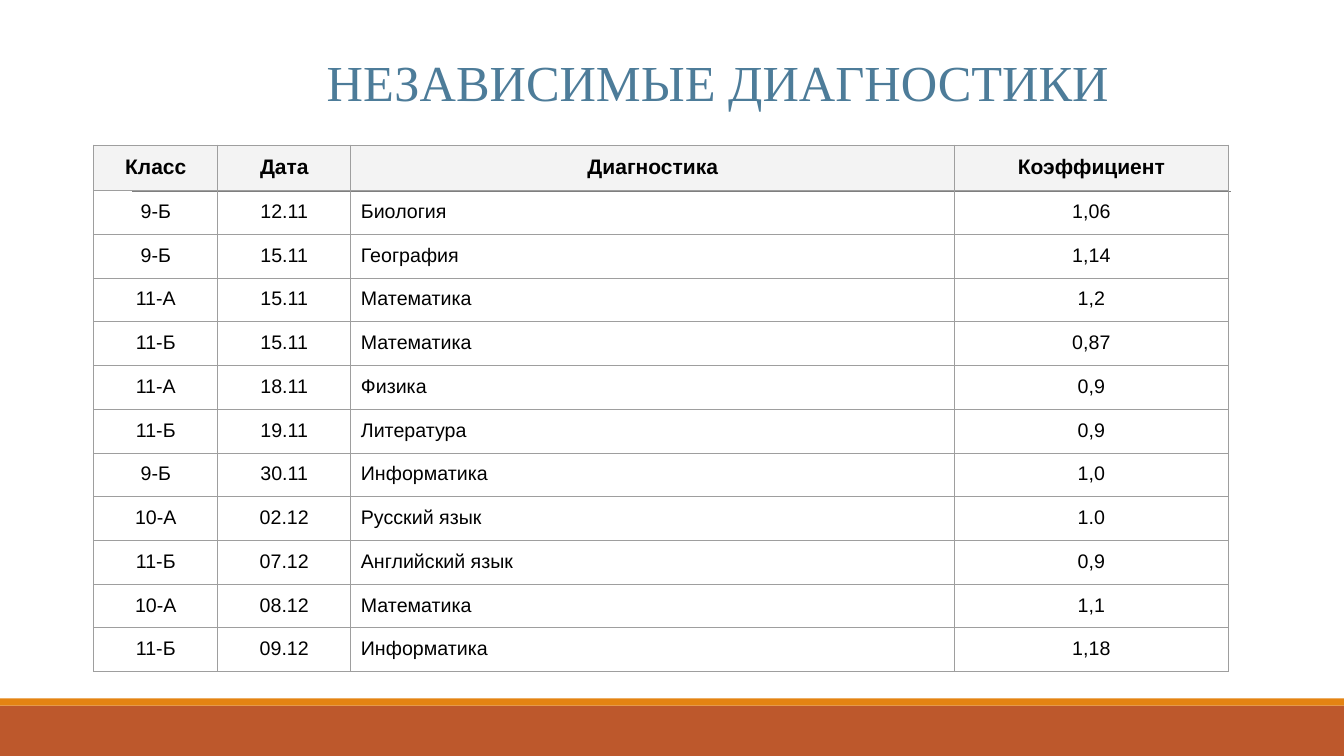
"""Builds a slide with a table of independent school diagnostics."""
from lxml import etree
from pptx import Presentation, util as u
from pptx.dml.color import RGBColor
from pptx.enum import shapes, text
from pptx.oxml import ns

TITLE = "НЕЗАВИСИМЫЕ ДИАГНОСТИКИ"
HEADINGS = ("Класс", "Дата", "Диагностика", "Коэффициент")
RESULTS = [
    ("9-Б", "12.11", "Биология", "1,06"),
    ("9-Б", "15.11", "География", "1,14"),
    ("11-А", "15.11", "Математика", "1,2"),
    ("11-Б", "15.11", "Математика", "0,87"),
    ("11-А", "18.11", "Физика", "0,9"),
    ("11-Б", "19.11", "Литература", "0,9"),
    ("9-Б", "30.11", "Информатика", "1,0"),
    ("10-А", "02.12", "Русский язык", "1.0"),
    ("11-Б", "07.12", "Английский язык", "0,9"),
    ("10-А", "08.12", "Математика", "1,1"),
    ("11-Б", "09.12", "Информатика", "1,18"),
]
COLORS = {"title": "4D7C99", "text": "000000", "heading": "F3F3F3", "grid": "9E9E9E",
          "rule": "7F7F7F", "footer": "BD582C", "stripe": "E48312"}
WIDTH, HEIGHT = 13.33, 7.5
FOOTER, STRIPE = 0.5, 0.07
COLUMNS = (1.23, 1.32, 5.99, 2.71)
TABLE_LEFT, TABLE_TOP, TABLE_HEIGHT = 0.93, 1.44, 5.22
HEADING_HEIGHT = 0.45
RESULT_HEIGHT = (TABLE_HEIGHT - HEADING_HEIGHT) / len(RESULTS)
SUBJECT_COLUMN = HEADINGS.index("Диагностика")
CELL_INSET = 0.1


def write(frame, words, size=14, font="Arial", color="text", bold=False,
          align=text.PP_ALIGN.CENTER):
    paragraph = frame.paragraphs[0]
    paragraph.alignment = align
    run = paragraph.add_run()
    run.text = words
    run.font.size, run.font.name, run.font.bold = u.Pt(size), font, bold
    run.font.color.rgb = RGBColor.from_string(COLORS[color])


def add_band(slide, top, height, color):
    band = slide.shapes.add_shape(shapes.MSO_SHAPE.RECTANGLE, 0, u.Inches(top),
                                  u.Inches(WIDTH), u.Inches(height))
    band.shadow.inherit = False
    band.fill.solid()
    band.fill.fore_color.rgb = RGBColor.from_string(COLORS[color])
    band.line.fill.background()


def add_rule(slide, left, right, top):
    rule = slide.shapes.add_connector(shapes.MSO_CONNECTOR.STRAIGHT, u.Inches(left),
                                      u.Inches(top), u.Inches(right), u.Inches(top))
    rule.line.color.rgb = RGBColor.from_string(COLORS["rule"])
    rule.line.width = u.Pt(0.75)
    etree.SubElement(rule._element.spPr, ns.qn("a:effectLst"))


def add_borders(cell):
    properties = cell._tc.get_or_add_tcPr()
    for position, side in enumerate(("lnL", "lnR", "lnT", "lnB")):
        border = etree.Element(ns.qn(f"a:{side}"), w=str(u.Pt(0.75)))
        fill = etree.SubElement(border, ns.qn("a:solidFill"))
        etree.SubElement(fill, ns.qn("a:srgbClr"), val=COLORS["grid"])
        properties.insert(position, border)


def add_results(slide):
    rows = [HEADINGS, *RESULTS]
    table = slide.shapes.add_table(
        len(rows), len(COLUMNS), u.Inches(TABLE_LEFT), u.Inches(TABLE_TOP),
        u.Inches(sum(COLUMNS)), u.Inches(TABLE_HEIGHT)).table
    table.horz_banding = False
    for column, width in zip(table.columns, COLUMNS):
        column.width = u.Inches(width)
    for row, values in enumerate(rows):
        heading = row == 0
        table.rows[row].height = u.Inches(HEADING_HEIGHT if heading else RESULT_HEIGHT)
        for column, value in enumerate(values):
            cell = table.cell(row, column)
            cell.margin_left = cell.margin_right = u.Inches(CELL_INSET)
            cell.margin_top = cell.margin_bottom = u.Inches(CELL_INSET)
            if heading:
                cell.fill.solid()
                cell.fill.fore_color.rgb = RGBColor.from_string(COLORS["heading"])
            else:
                cell.fill.background()
            add_borders(cell)
            left = column == SUBJECT_COLUMN and not heading
            write(cell.text_frame, value, size=15 if heading else 14, bold=heading,
                  align=text.PP_ALIGN.LEFT if left else text.PP_ALIGN.CENTER)


def add_title(slide):
    title = slide.shapes.title
    title.left, title.top = u.Inches(1.08), u.Inches(0.5)
    title.width, title.height = u.Inches(12.08), u.Inches(0.62)
    frame = title.text_frame
    frame.margin_left = frame.margin_right = frame.margin_bottom = 0
    frame.margin_top = u.Inches(0.01)
    frame.vertical_anchor = text.MSO_ANCHOR.TOP
    frame.word_wrap = True
    frame.auto_size = text.MSO_AUTO_SIZE.SHAPE_TO_FIT_TEXT
    write(frame, TITLE, size=36, font="Times New Roman", color="title")


def main():
    deck = Presentation()
    deck.slide_width, deck.slide_height = u.Inches(WIDTH), u.Inches(HEIGHT)
    slide = deck.slides.add_slide(deck.slide_layouts.get_by_name("Title Only"))
    add_band(slide, HEIGHT - FOOTER, FOOTER, "footer")
    add_band(slide, HEIGHT - FOOTER - STRIPE, STRIPE, "stripe")
    add_rule(slide, 1.31, 12.21, 1.9)
    add_title(slide)
    add_results(slide)
    deck.save("out.pptx")


if __name__ == "__main__":
    main()
